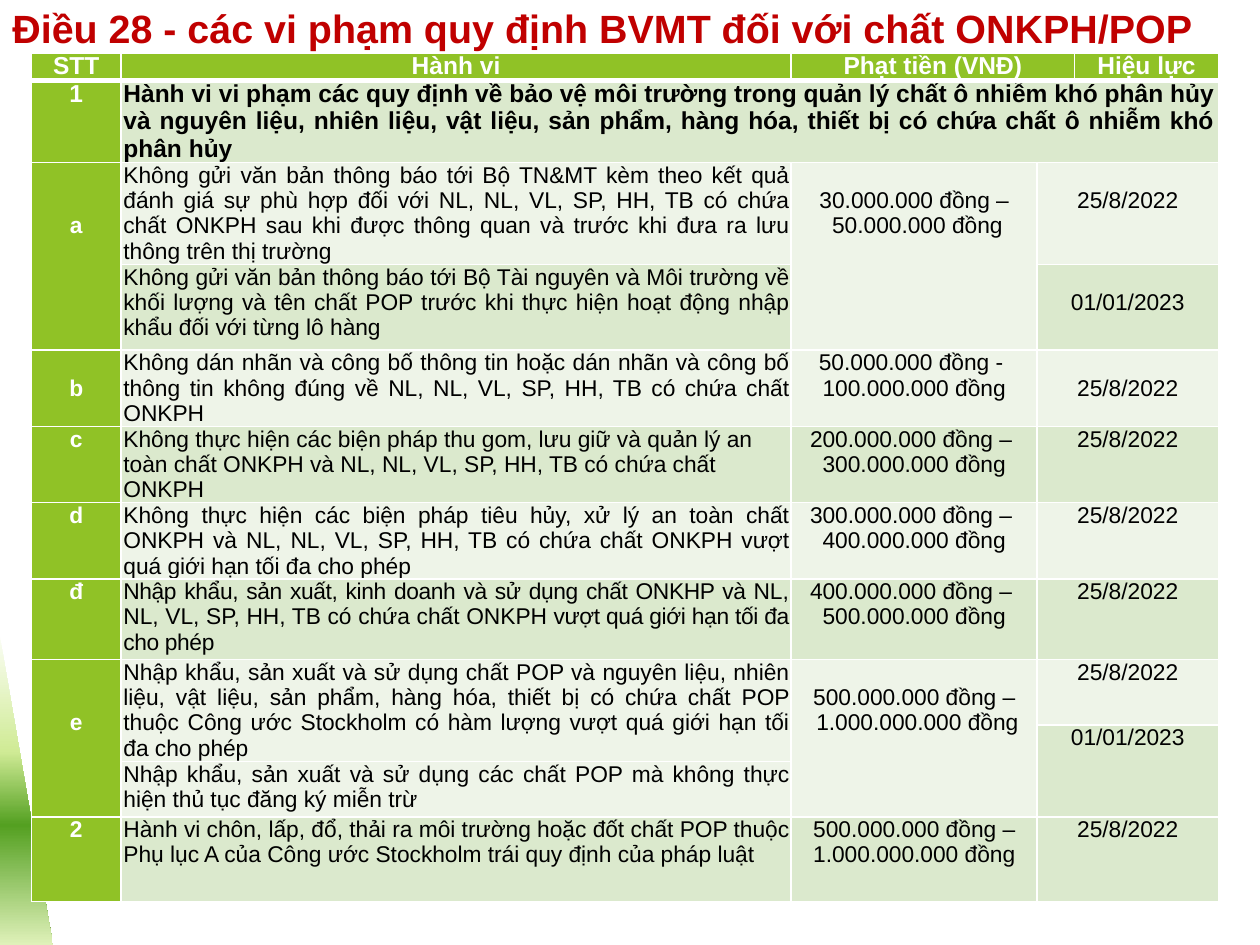
from typing import NamedTuple
from lxml.etree import SubElement
from pptx import Presentation
from pptx.dml.color import RGBColor
from pptx.enum.shapes import MSO_SHAPE
from pptx.enum.text import PP_ALIGN
from pptx.oxml import parse_xml
from pptx.oxml.ns import nsdecls, qn
from pptx.util import Inches, Pt

WIDE, HIGH = 10, 7.5
COLS = [0.71, 5.32, 1.95, 0.3, 1.14]
ROWS = [0.22, 0.65, 0.81, 0.68, 0.6, 0.6, 0.6, 0.64, 0.52, 0.29, 0.44, 0.67]
GREEN, WHITE, BLACK, RED = "90C226", "FFFFFF", "000000", "C00000"
BANDS = ["EEF4E8", "DBE9CD"]
FADE = [(0, "FAFDF3"), (37, "D0EB96"), (61, "54A021"), (100, "DFF1B9")]
MID, FULL, LEFT = PP_ALIGN.CENTER, PP_ALIGN.JUSTIFY, PP_ALIGN.LEFT
LINE = 0.2
PITCH = {13: 14.5, 14: 15.6}
DATE, LATER = "25/8/2022", "01/01/2023"


class Piece(NamedTuple):
    text: str
    gap: float = 0


class Item(NamedTuple):
    row: int
    col: int
    lines: list[list[Piece]]
    align: PP_ALIGN = MID
    tall: int = 1
    wide: int = 1
    drop: int = 0


def plain(*lines: str) -> list[list[Piece]]:
    return [[Piece(line)] for line in lines]


def label(row: int, text: str, tall: int = 1, drop: int = 0) -> Item:
    return Item(row, 0, plain(text), MID, tall, 1, drop)


def act(row: int, text: str, align: PP_ALIGN = FULL, tall: int = 1, wide: int = 1) -> Item:
    return Item(row, 1, plain(text), align, tall, wide)


def fine(row: int, low: str, top: str, tall: int = 1, drop: int = 0) -> Item:
    return Item(row, 2, plain(low, top), MID, tall, 1, drop)


def date(row: int, text: str = DATE, tall: int = 1, drop: int = 0) -> Item:
    return Item(row, 3, plain(text), MID, tall, 2, drop)


ITEMS = [
    label(0, "STT"),
    act(0, "Hành vi", MID),
    Item(0, 2, plain("Phạt tiền (VNĐ)"), wide=2),
    Item(0, 4, plain("Hiệu lực")),
    label(1, "1"),
    act(1, "Hành vi vi phạm các quy định về bảo vệ môi trường trong quản lý chất ô nhiễm khó phân hủy và nguyên liệu, nhiên liệu, vật liệu, sản phẩm, hàng hóa, thiết bị có chứa chất ô nhiễm khó phân hủy", wide=4),
    label(2, "a", 2, 2),
    act(2, "Không gửi văn bản thông báo tới Bộ TN&MT kèm theo kết quả đánh giá sự phù hợp đối với NL, NL, VL, SP, HH, TB có chứa chất ONKPH sau khi được thông quan và trước khi đưa ra lưu thông trên thị trường"),
    fine(2, "30.000.000 đồng –", " 50.000.000 đồng", 2, 1),
    date(2, drop=1),
    act(3, "Không gửi văn bản thông báo tới Bộ Tài nguyên và Môi trường về khối lượng và tên chất POP trước khi thực hiện hoạt động nhập khẩu đối với từng lô hàng"),
    date(3, LATER, drop=1),
    label(4, "b", drop=1),
    act(4, "Không dán nhãn và công bố thông tin hoặc dán nhãn và công bố thông tin không đúng về NL, NL, VL, SP, HH, TB có chứa chất ONKPH"),
    fine(4, "50.000.000 đồng - ", "100.000.000 đồng"),
    date(4, drop=1),
    label(5, "c"),
    act(5, "Không thực hiện các biện pháp thu gom, lưu giữ và quản lý an toàn chất ONKPH và NL, NL, VL, SP, HH, TB có chứa chất ONKPH", LEFT),
    fine(5, "200.000.000 đồng – ", "300.000.000 đồng"),
    date(5),
    label(6, "d"),
    act(6, "Không thực hiện các biện pháp tiêu hủy, xử lý an toàn chất ONKPH và NL, NL, VL, SP, HH, TB có chứa chất ONKPH vượt quá giới hạn tối đa cho phép"),
    fine(6, "300.000.000 đồng – ", "400.000.000 đồng"),
    date(6),
    label(7, "đ"),
    Item(7, 1, [[
        Piece("Nhập khẩu, sản xuất, kinh doanh và sử dụng chất ONKHP và ", -0.2),
        Piece("NL, NL, VL, SP, HH, TB có chứa chất ONKPH "),
        Piece("vượt quá giới hạn tối đa cho phép", -0.2),
    ]], FULL),
    fine(7, "400.000.000 đồng – ", "500.000.000 đồng"),
    date(7),
    label(8, "e", 3, 2),
    act(8, "Nhập khẩu, sản xuất và sử dụng chất POP và nguyên liệu, nhiên liệu, vật liệu, sản phẩm, hàng hóa, thiết bị có chứa chất POP thuộc Công ước Stockholm có hàm lượng vượt quá giới hạn tối đa cho phép ", tall=2),
    fine(8, "500.000.000 đồng –", " 1.000.000.000 đồng", 3, 1),
    date(8),
    date(9, LATER, 2),
    act(10, "Nhập khẩu, sản xuất và sử dụng các chất POP mà không thực hiện thủ tục đăng ký miễn trừ "),
    label(11, "2"),
    act(11, "Hành vi chôn, lấp, đổ, thải ra môi trường hoặc đốt chất POP thuộc Phụ lục A của Công ước Stockholm trái quy định của pháp luật"),
    fine(11, "500.000.000 đồng –", "1.000.000.000 đồng"),
    date(11),
]


def tint(code: str) -> RGBColor:
    return RGBColor.from_string(code)


def write(para, piece: Piece, size: float, code: str, bold: bool) -> None:
    run = para.add_run()
    run.text = piece.text
    font = run.font
    font.name, font.size, font.bold = "Arial", Pt(size), bold
    font.color.rgb = tint(code)
    if piece.gap:
        run._r.get_or_add_rPr().set("spc", str(round(piece.gap * 100)))


def edge(cell, row: int) -> None:
    props = cell._tc.get_or_add_tcPr()
    thick = {"T": 3 if row == 1 else 1, "B": 3 if row == 0 else 1}
    for spot, side in enumerate("LRTB"):
        line = SubElement(props, qn(f"a:ln{side}"), w=str(Pt(thick.get(side, 1))))
        fill = SubElement(line, qn("a:solidFill"))
        SubElement(fill, qn("a:srgbClr"), val=WHITE)
        props.remove(line)
        props.insert(spot, line)


def base(cell, row: int, col: int) -> None:
    cell.margin_left = cell.margin_right = Inches(0.02)
    cell.margin_top = cell.margin_bottom = 0
    cell.fill.solid()
    cell.fill.fore_color.rgb = tint(GREEN if row == 0 or col == 0 else BANDS[row % 2])
    edge(cell, row)


def place(grid, item: Item) -> None:
    cell = grid.cell(item.row, item.col)
    if item.tall > 1 or item.wide > 1:
        cell.merge(grid.cell(item.row + item.tall - 1, item.col + item.wide - 1))
    cell.margin_top = Inches(item.drop * LINE)
    head = item.row == 0 or item.col == 0
    size = 14 if item.row < 2 else 13
    for spot, line in enumerate(item.lines):
        frame = cell.text_frame
        para = frame.add_paragraph() if spot else frame.paragraphs[0]
        para.alignment = item.align
        para.line_spacing = Pt(PITCH[size])
        for piece in line:
            write(para, piece, size, WHITE if head else BLACK, head or item.row == 1)


def wedge(slide) -> None:
    shape = slide.shapes.add_shape(
        MSO_SHAPE.RIGHT_TRIANGLE, 0, Inches(5.06), Inches(0.42), Inches(HIGH - 5.06))
    shape.shadow.inherit = False
    shape.line.fill.background()
    stops = "".join(
        f'<a:gs pos="{pos * 1000}"><a:srgbClr val="{code}"/></a:gs>' for pos, code in FADE)
    fade = parse_xml(
        f'<a:gradFill {nsdecls("a")}><a:gsLst>{stops}</a:gsLst>'
        '<a:lin ang="5400000" scaled="0"/></a:gradFill>')
    shape._element.spPr.find(qn("a:prstGeom")).addnext(fade)


def title(slide) -> None:
    box = slide.shapes.add_textbox(0, Inches(-0.02), Inches(9.92), Inches(0.58))
    box.text_frame.word_wrap = True
    text = "Điều 28 - các vi phạm quy định BVMT đối với chất ONKPH/POP"
    write(box.text_frame.paragraphs[0], Piece(text), 22.5, RED, True)


def table(slide) -> None:
    grid = slide.shapes.add_table(
        len(ROWS), len(COLS), Inches(0.25), Inches(0.42),
        Inches(sum(COLS)), Inches(sum(ROWS))).table
    for part, size in zip(grid.columns, COLS):
        part.width = Inches(size)
    for part, size in zip(grid.rows, ROWS):
        part.height = Inches(size)
    for row in range(len(ROWS)):
        for col in range(len(COLS)):
            base(grid.cell(row, col), row, col)
    for item in ITEMS:
        place(grid, item)


def main() -> None:
    deck = Presentation()
    deck.slide_width, deck.slide_height = Inches(WIDE), Inches(HIGH)
    slide = deck.slides.add_slide(deck.slide_layouts[6])
    wedge(slide)
    table(slide)
    title(slide)
    deck.save("out.pptx")


if __name__ == "__main__":
    main()
